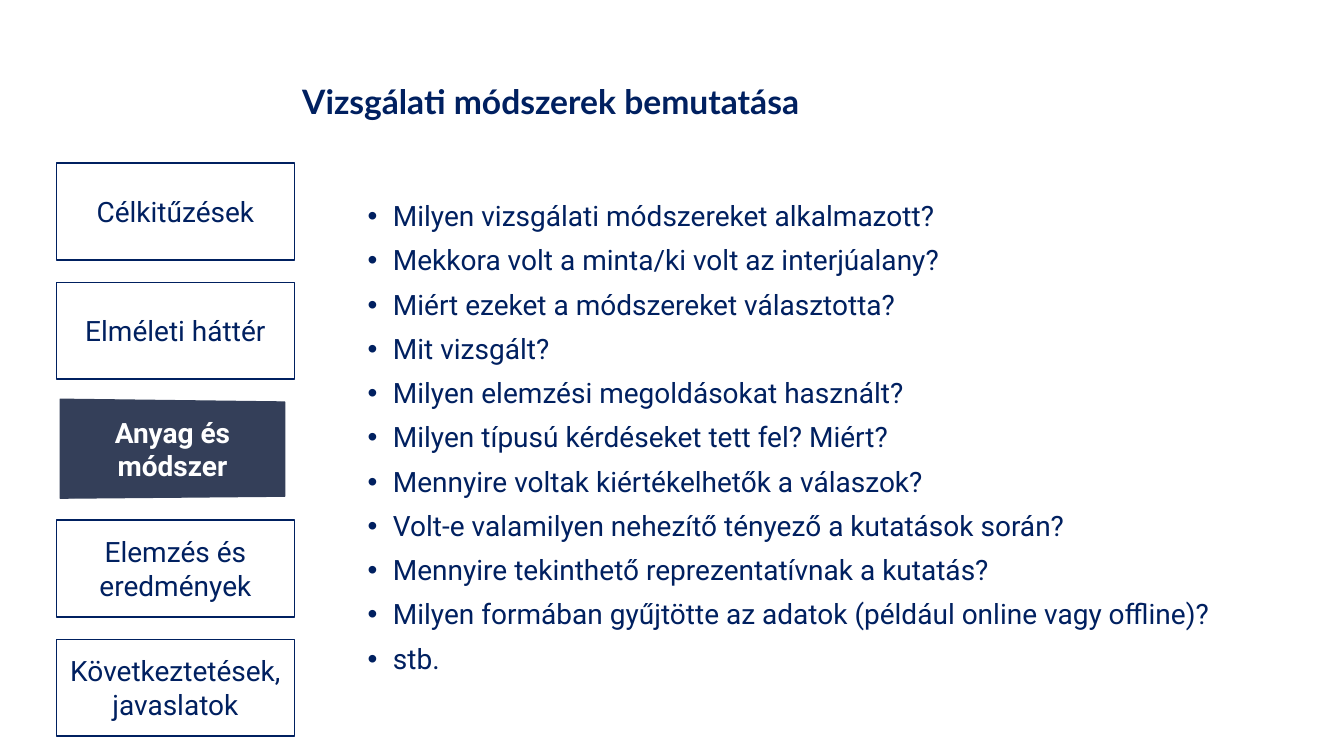
from lxml import etree
from pptx import Presentation
from pptx import util as u
from pptx.dml.color import RGBColor
from pptx.enum import shapes, text
from pptx.oxml.ns import qn

THEME = {
    "navy": RGBColor.from_string("002060"),
    "active": RGBColor.from_string("343F59"),
    "white": RGBColor.from_string("FFFFFF"),
    "body_font": "Roboto",
    "title_font": "Lato",
    "body_size": u.Pt(20),
    "title_size": u.Pt(24),
}
BODY = {"name": THEME["body_font"], "size": THEME["body_size"], "bold": False}
TITLE = {"name": THEME["title_font"], "size": THEME["title_size"], "bold": True}

STEPS = [
    "Célkitűzések",
    "Elméleti háttér",
    "Anyag és módszer",
    "Elemzés és eredmények",
    "Következtetések, javaslatok",
]
ACTIVE_STEP = 2
QUESTIONS = [
    "Milyen vizsgálati módszereket alkalmazott?",
    "Mekkora volt a minta/ki volt az interjúalany?",
    "Miért ezeket a módszereket választotta?",
    "Mit vizsgált?",
    "Milyen elemzési megoldásokat használt?",
    "Milyen típusú kérdéseket tett fel? Miért?",
    "Mennyire voltak kiértékelhetők a válaszok?",
    "Volt-e valamilyen nehezítő tényező a kutatások során?",
    "Mennyire tekinthető reprezentatívnak a kutatás?",
    "Milyen formában gyűjtötte az adatok (például online vagy offline)?",
    "stb.",
]


def write(p, words, style, color):
    r = p.add_run()
    r.text = words
    for key, value in style.items():
        setattr(r.font, key, value)
    r.font.color.rgb = color


prs = Presentation()
prs.slide_width, prs.slide_height = u.Pt(960), u.Pt(540)
s = prs.slides.add_slide(prs.slide_layouts[6])

left, top, width, height, pitch = 40.3, 116.6, 170, 69.1, 85
for i, step in enumerate(STEPS):
    active = i == ACTIVE_STEP
    y = top + i * pitch
    if active:
        corners = [(43, 285.2), (203.4, 287.2), (203.4, 354.4), (43, 355.8)]
        points = [(u.Pt(cx), u.Pt(cy)) for cx, cy in corners]
        builder = s.shapes.build_freeform(*points[0])
        builder.add_line_segments(points[1:], close=True)
        sp = builder.convert_to_shape()
    else:
        sp = s.shapes.add_shape(
            shapes.MSO_SHAPE.ROUNDED_RECTANGLE,
            u.Pt(left), u.Pt(y), u.Pt(width), u.Pt(height),
        )
        sp.adjustments[0] = 0
    sp.shadow.inherit = False
    sp.fill.solid()
    sp.fill.fore_color.rgb = THEME["active"] if active else THEME["white"]
    sp.line.color.rgb = THEME["active"] if active else THEME["navy"]
    sp.line.width = u.Pt(1)
    tf = sp.text_frame
    tf.word_wrap = True
    tf.vertical_anchor = text.MSO_ANCHOR.MIDDLE
    p = tf.paragraphs[0]
    p.alignment = text.PP_ALIGN.CENTER
    write(p, step, {**BODY, "bold": active}, THEME["white"] if active else THEME["navy"])

sp = s.shapes.add_textbox(u.Pt(255.6), u.Pt(141.1), u.Pt(635.8), u.Pt(290.2))
tf = sp.text_frame
tf.word_wrap = True
for i, question in enumerate(QUESTIONS):
    p = tf.add_paragraph() if i else tf.paragraphs[0]
    pPr = p._p.get_or_add_pPr()
    pPr.set("marL", str(u.Pt(18)))
    pPr.set("indent", str(-u.Pt(18)))
    etree.SubElement(pPr, qn("a:buFont")).set("typeface", "Arial")
    etree.SubElement(pPr, qn("a:buChar")).set("char", "•")
    p.line_spacing = 0.9
    if i:
        p.space_before = u.Pt(10)
    write(p, question, BODY, THEME["navy"])

sp = s.shapes.add_textbox(u.Pt(208.8), u.Pt(54.7), u.Pt(542.9), u.Pt(36))
tf = sp.text_frame
tf.word_wrap = True
tf.vertical_anchor = text.MSO_ANCHOR.BOTTOM
p = tf.paragraphs[0]
p.line_spacing = 0.9
write(p, "Vizsgálati módszerek bemutatása", TITLE, THEME["navy"])

prs.save("out.pptx")
